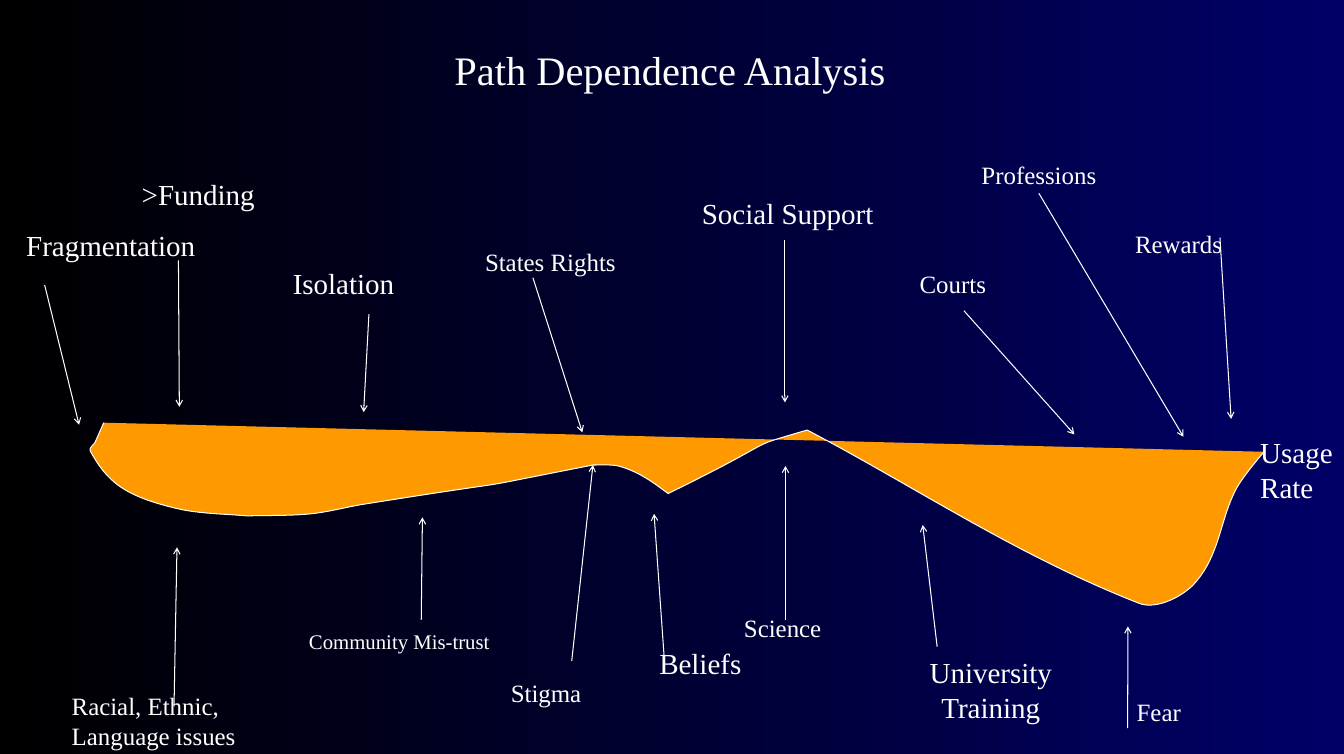
"""Build the Path Dependence Analysis slide with its usage-rate curve and labelled arrows."""
from dataclasses import dataclass

from lxml.etree import SubElement
from pptx import Presentation
from pptx.dml.color import RGBColor
from pptx.enum.shapes import MSO_CONNECTOR as Connector
from pptx.enum.text import MSO_ANCHOR as Anchor, MSO_AUTO_SIZE as AutoSize, PP_ALIGN as Align
from pptx.oxml.ns import qn
from pptx.util import Cm, Pt


@dataclass(frozen=True)
class Theme:
    font: str = "Times New Roman"
    text: RGBColor = RGBColor(0xFF, 0xFF, 0xFF)
    area: RGBColor = RGBColor(0xFF, 0x99, 0x00)
    dark: RGBColor = RGBColor(0x00, 0x00, 0x00)
    blue: RGBColor = RGBColor(0x00, 0x00, 0x66)
    title: int = 39
    large: int = 28
    medium: int = 24
    small: int = 20
    line: int = 1


theme = Theme()


def format_text(text_frame, text, size, align):
    text_frame.text = text
    text_frame.word_wrap = True
    for paragraph in text_frame.paragraphs:
        paragraph.alignment = align
        paragraph.font.name = theme.font
        paragraph.font.size = Pt(size)
        paragraph.font.color.rgb = theme.text


presentation = Presentation()
presentation.slide_width = Cm(45.72)
presentation.slide_height = Cm(25.65)
slide = presentation.slides.add_slide(presentation.slide_layouts[5])

background = slide.background.fill
background.gradient()
background.gradient_angle = 0
for stop, color in zip(background.gradient_stops, (theme.dark, theme.blue)):
    stop.color.rgb = color

title = slide.shapes.title
title.left, title.top, title.width, title.height = Cm(12.24), Cm(1.4), Cm(21.11), Cm(1.93)
format_text(title.text_frame, "Path Dependence Analysis", theme.title, Align.CENTER)
title.text_frame.auto_size = AutoSize.NONE
title.text_frame.vertical_anchor = Anchor.TOP

curve_start = (3.53, 14.38)
curve_segments = [
    ((3.43, 14.61), (3.33, 14.83), (3.23, 15.06)),
    ((3.18, 15.14), (3.02, 15.24), (3.07, 15.34)),
    ((3.63, 16.36), (4.19, 16.87), (6.02, 17.3)),
    ((6.78, 17.48), (7.62, 17.48), (8.41, 17.55)),
    ((9.14, 17.53), (9.86, 17.55), (10.57, 17.48)),
    ((11.15, 17.42), (11.71, 17.27), (12.27, 17.17)),
    ((19, 16.1), (14.81, 16.87), (20.17, 15.82)),
    ((20.45, 15.82), (20.78, 15.8), (21.03, 15.85)),
    ((21.77, 16.05), (22.28, 16.46), (22.73, 16.79)),
    ((26.87, 14.76), (25.12, 15.32), (27.46, 14.63)),
    ((31.22, 16.61), (34.54, 18.87), (38.74, 20.52)),
    ((39.37, 20.78), (40.34, 20.22), (40.67, 19.81)),
    ((41.5, 18.85), (41.5, 17.7), (42.04, 16.66)),
    ((42.27, 16.21), (43, 15.37), (43, 15.37)),
]
control_points = [(Cm(x), Cm(y)) for segment in curve_segments for x, y in segment]
builder = slide.shapes.build_freeform(Cm(curve_start[0]), Cm(curve_start[1]))
builder.add_line_segments(control_points, close=False)
usage_area = builder.convert_to_shape()
outline = next(usage_area.element.iter(qn("a:path")))
for index, straight in enumerate(outline.findall(qn("a:lnTo"))):
    if index % 3 == 0:
        curve = SubElement(outline, qn("a:cubicBezTo"))
    curve.append(straight[0])
    outline.remove(straight)
usage_area.shadow.inherit = False
usage_area.fill.solid()
usage_area.fill.fore_color.rgb = theme.area
usage_area.line.color.rgb = theme.text
usage_area.line.width = Pt(theme.line)

labels = [
    ("Fragmentation", 0.64, 7.62, 7.21, 1, theme.large, Align.LEFT),
    (">Funding", 4.57, 5.89, 4.85, 1, theme.large, Align.LEFT),
    ("Usage\nRate", 42.62, 14.66, 3.1, 2, theme.large, Align.LEFT),
    ("Isolation", 9.71, 8.92, 5.64, 1, theme.large, Align.LEFT),
    ("Beliefs", 21.08, 21.82, 5.49, 1, theme.large, Align.CENTER),
    ("University\nTraining", 30.67, 22.15, 6.07, 2, theme.large, Align.CENTER),
    ("Racial, Ethnic, Language issues", 2.19, 23.38, 8.61, 2, theme.medium, Align.LEFT),
    ("Stigma", 16.38, 22.94, 4.39, 1, theme.medium, Align.CENTER),
    ("Social Support", 22.3, 6.53, 8.99, 1, theme.large, Align.CENTER),
    ("Rewards", 36.78, 7.66, 6.63, 1, theme.medium, Align.CENTER),
    ("Courts", 30.18, 9.02, 4.47, 1, theme.medium, Align.CENTER),
    ("Professions", 32, 5.31, 6.68, 1, theme.medium, Align.CENTER),
    ("Fear", 37.49, 23.57, 3.86, 1, theme.medium, Align.CENTER),
    ("Science", 25.06, 20.73, 3.61, 1, theme.medium, Align.LEFT),
    ("States Rights", 16.25, 8.26, 5.23, 1, theme.medium, Align.LEFT),
    ("Community Mis-trust", 10.26, 21.28, 7.62, 1, theme.small, Align.LEFT),
]
label_boxes = {}
for text, left, top, width, lines, size, align in labels:
    height = Pt(1.2 * size * lines) + Cm(0.25)
    box = slide.shapes.add_textbox(Cm(left), Cm(top), Cm(width), height)
    format_text(box.text_frame, text, size, align)
    box.text_frame.auto_size = AutoSize.SHAPE_TO_FIT_TEXT
    label_boxes[text] = box

arrows = {
    "Fragmentation": (1.52, 9.7, 2.69, 14.45),
    ">Funding": (6.07, 8.86, 6.1, 13.84),
    "Isolation": (12.55, 10.69, 12.37, 14.02),
    "States Rights": (18.13, 9.45, 19.81, 14.71),
    "Social Support": (26.7, 8.18, 26.7, 13.69),
    "Courts": (32.79, 10.57, 36.55, 14.78),
    "Professions": (35.33, 6.58, 40.26, 14.86),
    "Rewards": (41.5, 8.08, 41.88, 14.25),
    "Racial, Ethnic, Language issues": (5.92, 24.03, 6.02, 18.62),
    "Community Mis-trust": (14.33, 21.08, 14.37, 17.6),
    "Stigma": (19.45, 22.48, 20.17, 15.82),
    "Beliefs": (22.6, 22.45, 22.25, 17.48),
    "Science": (26.72, 21.08, 26.72, 15.85),
    "University\nTraining": (31.88, 22, 31.39, 17.86),
    "Fear": (38.36, 24.77, 38.37, 21.31),
}
for label, ends in arrows.items():
    arrow = slide.shapes.add_connector(Connector.STRAIGHT, *map(Cm, ends))
    if label == "Professions":
        arrow.begin_connect(label_boxes[label], 2)
    arrow.line.color.rgb = theme.text
    arrow.line.width = Pt(theme.line)
    properties = arrow.element.spPr
    SubElement(properties.find(qn("a:ln")), qn("a:tailEnd"), type="arrow")
    SubElement(properties, qn("a:effectLst"))

presentation.save("out.pptx")
